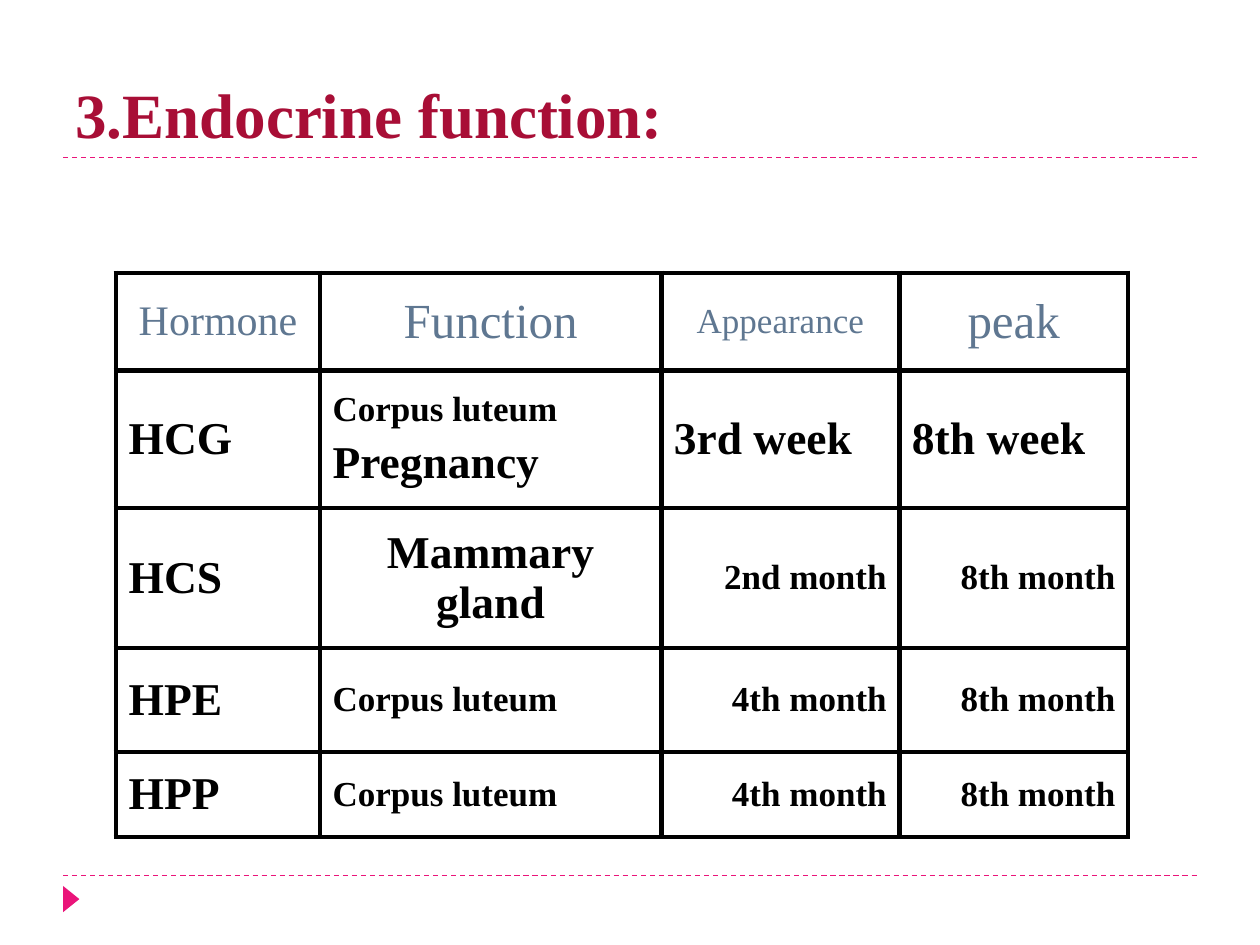
from dataclasses import dataclass

from lxml import etree
from pptx import Presentation
from pptx.dml.color import RGBColor
from pptx.enum.dml import MSO_LINE
from pptx.enum.shapes import MSO_CONNECTOR, MSO_SHAPE
from pptx.enum.text import MSO_ANCHOR, PP_ALIGN
from pptx.oxml.ns import qn
from pptx.util import Cm, Pt

LEFT, CENTER, RIGHT, JUSTIFY = (PP_ALIGN.LEFT, PP_ALIGN.CENTER,
                                PP_ALIGN.RIGHT, PP_ALIGN.JUSTIFY)
MIDDLE, BOTTOM = MSO_ANCHOR.MIDDLE, MSO_ANCHOR.BOTTOM
STRAIGHT, TRIANGLE, DASH = MSO_CONNECTOR.STRAIGHT, MSO_SHAPE.ISOSCELES_TRIANGLE, MSO_LINE.DASH


@dataclass(frozen=True)
class Theme:
    font: str = "Times New Roman"
    title: str = "A80E36"
    accent: str = "EA157A"
    header: str = "5F7791"
    ink: str = "000000"
    title_size: int = 36
    huge: int = 28
    large: int = 26
    medium: int = 24
    small: int = 20
    rule: float = 0.75
    border: float = 3


class SlideBuilder:
    def __init__(self, slide, theme):
        self.s, self.theme = slide, theme

    def add_text(self, p, text, size, color, bold=False, align=LEFT):
        p.alignment = align
        r = p.add_run()
        r.text = text
        style = {"name": self.theme.font, "size": Pt(size), "bold": bold}
        for key, value in style.items():
            setattr(r.font, key, value)
        r.font.color.rgb = RGBColor.from_string(color)

    def title(self, text, x, y, w, h):
        tf = self.s.shapes.add_textbox(Cm(x), Cm(y), Cm(w), Cm(h)).text_frame
        tf.word_wrap, tf.vertical_anchor = True, BOTTOM
        self.add_text(tf.paragraphs[0], text, self.theme.title_size, self.theme.title, True)

    def rule(self, x1, x2, y):
        sp = self.s.shapes.add_connector(STRAIGHT, Cm(x1), Cm(y), Cm(x2), Cm(y))
        sp.line.color.rgb = RGBColor.from_string(self.theme.accent)
        sp.line.width, sp.line.dash_style = Pt(self.theme.rule), DASH
        etree.SubElement(sp.element.spPr, qn("a:effectLst"))

    def marker(self, x, y, w, h):
        sp = self.s.shapes.add_shape(TRIANGLE, Cm(x), Cm(y), Cm(w), Cm(h))
        sp.rotation = 90
        sp.shadow.inherit = False
        sp.fill.solid()
        sp.fill.fore_color.rgb = RGBColor.from_string(self.theme.accent)
        sp.line.fill.background()

    def borders(self, cell):
        tc_pr = cell._tc.get_or_add_tcPr()
        for i, side in enumerate(("lnL", "lnR", "lnT", "lnB")):
            ln = etree.Element(qn(f"a:{side}"), w=str(Pt(self.theme.border)))
            fill = etree.SubElement(ln, qn("a:solidFill"))
            etree.SubElement(fill, qn("a:srgbClr"), val=self.theme.ink)
            tc_pr.insert(i, ln)

    def table(self, x, y, widths, heights, rows):
        table = self.s.shapes.add_table(len(heights), len(widths), Cm(x), Cm(y),
                                        Cm(sum(widths)), Cm(sum(heights))).table
        table.horz_banding = False
        for col, w in zip(table.columns, widths):
            col.width = Cm(w)
        for row, h in zip(table.rows, heights):
            row.height = Cm(h)
        for i, row in enumerate(rows):
            color = self.theme.header if i == 0 else self.theme.ink
            for j, (align, *lines) in enumerate(row):
                cell = table.cell(i, j)
                cell.vertical_anchor = MIDDLE
                cell.fill.background()
                self.borders(cell)
                tf = cell.text_frame
                for n, (text, size) in enumerate(lines):
                    p = tf.add_paragraph() if n else tf.paragraphs[0]
                    p.space_before = Pt(round(size * 0.2))
                    self.add_text(p, text, size, color, i > 0, align)


def main():
    prs = Presentation()
    prs.slide_width, prs.slide_height = Cm(25.4), Cm(19.05)
    theme = Theme()
    s = SlideBuilder(prs.slides.add_slide(prs.slide_layouts[6]), theme)

    # Frame: dashed rules and corner marker
    for y in (17.65, 3.18):
        s.rule(1.27, 24.13, y)
    s.marker(1.17, 17.96, 0.53, 0.33)

    # Title
    s.title("3.Endocrine function:", 1.27, 0.43, 22.86, 2.74)

    # Hormone table: each cell is an alignment followed by (text, size) lines
    big, small = theme.large, theme.small
    luteum = ("Corpus luteum", small)
    header = [(CENTER, line) for line in (
        ("Hormone", theme.medium), ("Function", theme.huge),
        ("Appearance", small), ("peak", theme.huge))]
    peak = (RIGHT, ("8th month", small))
    fourth = (RIGHT, ("4th month", small))
    rows = [
        header,
        [(LEFT, ("HCG", big)), (LEFT, luteum, ("Pregnancy", big)),
         (JUSTIFY, ("3rd week", big)), (JUSTIFY, ("8th week", big))],
        [(LEFT, ("HCS", big)), (CENTER, ("Mammary gland", big)),
         (RIGHT, ("2nd month", small)), peak],
        [(LEFT, ("HPE", big)), (LEFT, luteum), fourth, peak],
        [(LEFT, ("HPP", big)), (LEFT, luteum), fourth, peak],
    ]
    s.table(2.34, 5.5, (4.11, 6.88, 4.8, 4.61), (1.97, 2.77, 2.82, 2.1, 1.71), rows)

    prs.save("out.pptx")


if __name__ == "__main__":
    main()
